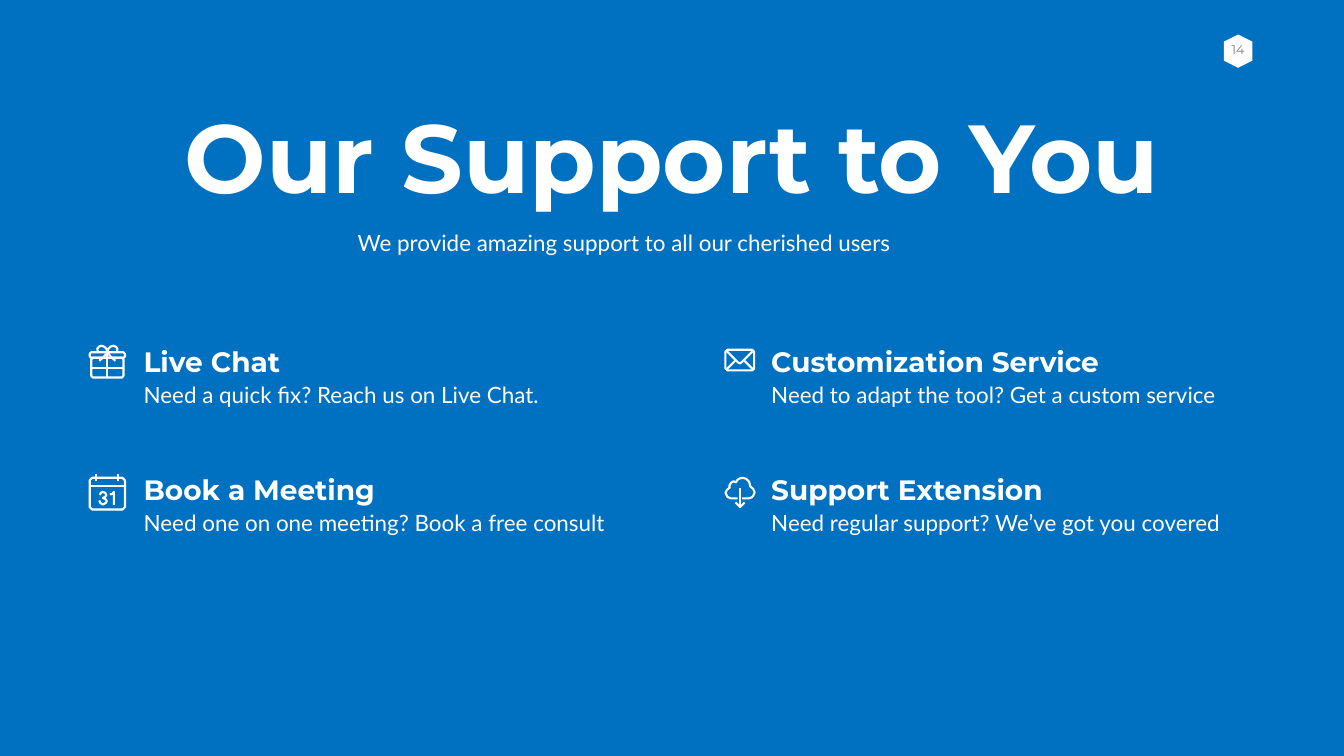
import dataclasses

import lxml.etree
import pptx
import pptx.dml.color
import pptx.enum.shapes
import pptx.enum.text
import pptx.oxml.ns
import pptx.util

PX = 9144
ALIGN = pptx.enum.text.PP_ALIGN
FIT = pptx.enum.text.MSO_AUTO_SIZE


@dataclasses.dataclass(frozen=True)
class Theme:
    """Colours, fonts and type sizes of the deck."""

    back: str = "0070C0"
    ink: str = "FFFFFF"
    muted: str = "7F7F7F"
    shade: str = "000000"
    head_font: str = "Montserrat"
    body_font: str = "Lato"
    title: int = 138
    heading: int = 40
    body: int = 32
    number: int = 18
    stroke: int = 3


THEME = Theme()
TITLE = {"name": THEME.head_font, "size": THEME.title, "color": THEME.ink, "bold": True}
HEADING = {"name": THEME.head_font, "size": THEME.heading, "color": THEME.ink, "bold": True}
BODY = {"name": THEME.body_font, "size": THEME.body, "color": THEME.ink, "bold": False}
NUMBER = {"name": THEME.head_font, "size": THEME.number, "color": THEME.muted, "bold": False}


def rectangle(left, top, right, bottom):
    """Return the closed stroke around a rectangle."""
    return [(left, top), (right, top), (right, bottom), (left, bottom), (left, top)]


def rounded(left, top, right, bottom, cut=3):
    """Return the closed stroke around a rectangle with softened corners."""
    return [
        (left + cut, top), (right - cut, top), (right, top + cut),
        (right, bottom - cut), (right - cut, bottom), (left + cut, bottom),
        (left, bottom - cut), (left, top + cut), (left + cut, top),
    ]


def mirrored(stroke, width):
    """Return a stroke flipped left to right within an icon of this width."""
    return [(width - x, y) for x, y in stroke]


BOW = [(37, 14), (35, 8), (31, 4), (25, 2), (20, 4), (17, 8), (18, 13), (20, 15)]
TAIL = [(37, 15), (30, 24), (21, 32)]
GIFT = [
    rounded(2, 15, 72, 26), rounded(5, 26, 69, 65), [(37, 15), (37, 65)],
    [(5, 46), (69, 46)], BOW, mirrored(BOW, 74), TAIL, mirrored(TAIL, 74),
]
CALENDAR = [
    rounded(2, 9, 72, 72, 5), [(2, 26), (72, 26)], [(15, 2), (15, 15)], [(59, 2), (59, 15)],
    [(22, 43), (24, 39), (28, 37), (33, 39), (35, 43), (33, 47), (28, 49), (33, 51),
     (36, 55), (34, 59), (28, 62), (23, 59), (21, 54)],
    [(42, 42), (47, 41), (50, 37), (50, 63)],
]
FOLD = [(3, 42), (21, 24)]
ENVELOPE = [
    rounded(2, 2, 59, 43, 4), [(4, 4), (27, 27), (31, 29), (34, 27), (57, 4)],
    FOLD, mirrored(FOLD, 61),
]
CLOUD = [
    [(26, 43), (13, 43), (6, 40), (2, 32), (5, 26), (10, 22), (10, 17), (13, 12),
     (18, 9), (23, 11), (26, 6), (31, 3), (36, 2), (43, 4), (49, 10), (51, 17),
     (51, 19), (57, 24), (60, 31), (57, 38), (54, 41), (47, 43), (35, 43)],
    [(31, 23), (31, 60)], [(22, 51), (31, 60), (40, 51)],
]

COLUMNS = (275, 1520)
ROWS = (678, 932)
SERVICES = [
    ("Live Chat", 295, "Need a quick fix? Reach us on Live Chat.", GIFT, (176, 684)),
    ("Customization Service", 679, "Need to adapt the tool? Get a custom service",
     ENVELOPE, (1437, 692)),
    ("Book a Meeting", 484, "Need one on one meeting? Book a free consult", CALENDAR, (176, 939)),
    ("Support Extension", 565, "Need regular support? We’ve got you covered", CLOUD, (1437, 946)),
]


def colour(code):
    """Return the colour for a hex code."""
    return pptx.dml.color.RGBColor.from_string(code)


def emu(*lengths):
    """Scale px lengths to EMU."""
    return [length * PX for length in lengths]


def write(shape, words, style, align=ALIGN.LEFT, wrap=True):
    """Fill a shape with one formatted paragraph and return its span."""
    frame = shape.text_frame
    layout = {"word_wrap": wrap, "auto_size": FIT.SHAPE_TO_FIT_TEXT,
              "vertical_anchor": pptx.enum.text.MSO_ANCHOR.TOP}
    for name, value in layout.items():
        setattr(frame, name, value)
    para = frame.paragraphs[0]
    for name, value in {"alignment": align, "space_before": pptx.util.Pt(0)}.items():
        setattr(para, name, value)
    span = para.add_run()
    span.text = words
    format_values = {"name": style["name"], "size": pptx.util.Pt(style["size"]),
                     "bold": style["bold"]}
    for name, value in format_values.items():
        setattr(span.font, name, value)
    span.font.color.rgb = colour(style["color"])
    return span


def place(shape, box):
    """Move a placeholder to a box."""
    for name, value in zip(("left", "top", "width", "height"), emu(*box)):
        setattr(shape, name, value)


def add_text_shadow(span):
    """Give a span a soft shadow down to the right."""
    qn = pptx.oxml.ns.qn
    effects = lxml.etree.Element(qn("a:effectLst"))
    shadow = lxml.etree.SubElement(effects, qn("a:outerShdw"), blurRad="38100",
                                   dist="38100", dir="2700000", algn="tl")
    tone = lxml.etree.SubElement(shadow, qn("a:srgbClr"), val=THEME.shade)
    lxml.etree.SubElement(tone, qn("a:alpha"), val="43000")
    span.font.fill._xPr.find(qn("a:solidFill")).addnext(effects)


def add_page_number(page, left, top, number):
    """Draw the page number on its upright hexagon."""
    badge = page.shapes.add_shape(pptx.enum.shapes.MSO_SHAPE.HEXAGON, *emu(left, top, 66, 57))
    badge.rotation = 270
    badge.shadow.inherit = False
    badge.fill.solid()
    badge.fill.fore_color.rgb = colour(THEME.ink)
    badge.line.fill.background()
    label = page.shapes.add_textbox(*emu(left - 10, top, 86, 50))
    label.text_frame.margin_top = label.text_frame.margin_bottom = 10 * PX
    write(label, number, NUMBER, ALIGN.CENTER, wrap=False)


def add_header(page, title, subtitle):
    """Fill the title and subtitle placeholders."""
    heading, tagline = page.placeholders
    place(heading, (340, 188, 1985, 242))
    add_text_shadow(write(heading, title, TITLE, ALIGN.CENTER))
    place(tagline, (382, 449, 1712, 64))
    write(tagline, subtitle, BODY, ALIGN.CENTER)


def add_icon(page, strokes, left, top):
    """Draw line art as one open outline at a corner."""
    builder = page.shapes.build_freeform(*strokes[0][0], scale=PX)
    builder.add_line_segments(strokes[0][1:], close=False)
    for start, *points in strokes[1:]:
        builder.move_to(*start)
        builder.add_line_segments(points, close=False)
    icon = builder.convert_to_shape(*emu(left, top))
    icon.shadow.inherit = False
    icon.fill.background()
    icon.line.color.rgb = colour(THEME.ink)
    icon.line.width = pptx.util.Pt(THEME.stroke)


def add_service(page, left, top, service):
    """Place one service with heading, description and icon."""
    name, width, description, strokes, corner = service
    write(page.shapes.add_textbox(*emu(left, top + 73, 963, 64)), description, BODY)
    write(page.shapes.add_textbox(*emu(left, top, width, 77)), name, HEADING, wrap=False)
    add_icon(page, strokes, *corner)


def main():
    """Build and save the deck."""
    deck = pptx.Presentation()
    deck.slide_width, deck.slide_height = emu(2666, 1500)
    page = deck.slides.add_slide(deck.slide_layouts[0])
    page.background.fill.solid()
    page.background.fill.fore_color.rgb = colour(THEME.back)
    add_page_number(page, 2423, 73, "14")
    add_header(page, "Our Support to You", "We provide amazing support to all our cherished users")
    for index, service in enumerate(SERVICES):
        row, column = divmod(index, len(COLUMNS))
        add_service(page, COLUMNS[column], ROWS[row], service)
    deck.save("out.pptx")


if __name__ == "__main__":
    main()
